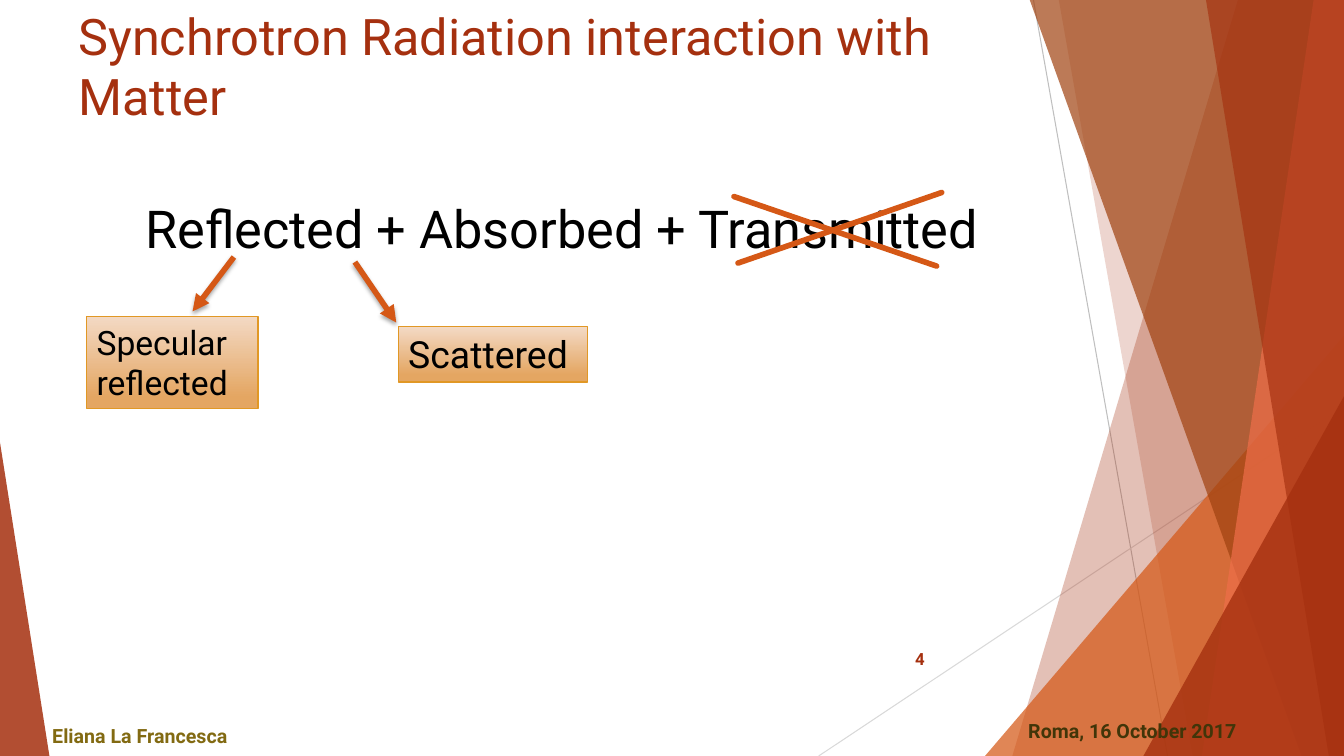
from pptx import Presentation
from pptx.dml.color import RGBColor
from pptx.enum.shapes import MSO_CONNECTOR, MSO_SHAPE
from pptx.enum.text import MSO_ANCHOR, PP_ALIGN
from pptx.oxml import parse_xml
from pptx.oxml.ns import nsdecls, qn
from pptx.util import Inches, Pt

STRAIGHT = MSO_CONNECTOR.STRAIGHT
RECTANGLE, TRIANGLE = MSO_SHAPE.RECTANGLE, MSO_SHAPE.ISOSCELES_TRIANGLE
TOP, MIDDLE = MSO_ANCHOR.TOP, MSO_ANCHOR.MIDDLE
LEFT, CENTER, RIGHT = PP_ALIGN.LEFT, PP_ALIGN.CENTER, PP_ALIGN.RIGHT

FONT = "Roboto"
WIDTH, HEIGHT = 13.33, 7.5
BRICK, ORANGE, BROWN, CORAL = "A5300F", "D55816", "A04210", "EE6E4A"
BLACK = "000000"
SHADOW = (
    '<a:outerShdw blurRad="38100" dist="25400" dir="5400000" rotWithShape="0">'
    '<a:srgbClr val="000000"><a:alpha val="35000"/></a:srgbClr></a:outerShdw>'
)


def rgb(value):
    return RGBColor.from_string(value)


def paint(shape, color, opacity):
    shape.shadow.inherit = False
    shape.line.fill.background()
    shape.fill.solid()
    shape.fill.fore_color.rgb = rgb(color)
    tint = shape.fill._xPr.find(qn("a:solidFill"))[0]
    tint.append(parse_xml(f'<a:alpha {nsdecls("a")} val="{opacity * 1000}"/>'))


def add_line(slide, start, end, color, width, arrow=False, round_cap=False):
    line = slide.shapes.add_connector(
        STRAIGHT, *(Inches(value) for value in (*start, *end)))
    line.line.color.rgb = rgb(color)
    line.line.width = Pt(width)
    outline = line.line._get_or_add_ln()
    if round_cap:
        outline.set("cap", "rnd")
    if arrow:
        outline.append(parse_xml(f'<a:tailEnd {nsdecls("a")} type="triangle"/>'))
    effects = SHADOW if arrow else ""
    line._element.spPr.append(
        parse_xml(f'<a:effectLst {nsdecls("a")}>{effects}</a:effectLst>'))


def write(frame, text, size, color, align=LEFT, anchor=TOP, bold=False, wrap=True):
    frame.word_wrap = wrap
    frame.vertical_anchor = anchor
    paragraph = frame.paragraphs[0]
    paragraph.text = text
    paragraph.alignment = align
    font = paragraph.font
    font.name, font.size, font.bold = FONT, Pt(size), bold
    font.color.rgb = rgb(color)


def add_text(slide, box, text, size, color, **style):
    label = slide.shapes.add_textbox(*(Inches(value) for value in box))
    write(label.text_frame, text, size, color, **style)


def add_shard(slide, box, top_left, bottom_left, color, opacity):
    left, top, width, height = box
    right, bottom = left + width, top + height
    builder = slide.shapes.build_freeform(Inches(left + top_left), Inches(top))
    builder.add_line_segments(
        [(Inches(x), Inches(y)) for x, y in (
            (right, top), (right, bottom), (left + bottom_left, bottom))],
        close=True)
    paint(builder.convert_to_shape(), color, opacity)


def add_corner(slide, box, apex, color, opacity):
    corner = slide.shapes.add_shape(TRIANGLE, *(Inches(value) for value in box))
    corner.adjustments[0] = apex
    paint(corner, color, opacity)


def right_box(width, height):
    return WIDTH - width, HEIGHT - height, width, height


def add_backdrop(slide):
    add_line(slide, (10.25, 0), (11.58, HEIGHT), "BFBFBF", 0.75)
    add_line(slide, (WIDTH, 4.03), (8.12, HEIGHT), "D9D9D9", 0.75)
    full = HEIGHT + 0.01
    add_shard(slide, right_box(3.29, full), 2.24, 0, BRICK, 30)
    add_shard(slide, right_box(2.83, full), 0, 1.33, BRICK, 20)
    add_corner(slide, right_box(3.56, 4.17), 1, ORANGE, 72)
    add_shard(slide, right_box(3.12, full), 0, 2.7, BROWN, 70)
    add_shard(slide, right_box(1.41, full), 1.11, 0, CORAL, 70)
    add_shard(slide, right_box(1.37, full), 0, 1.22, BRICK, 65)
    add_corner(slide, right_box(1.99, 3.57), 1, BRICK, 80)
    add_corner(slide, (0, 4.39, 0.49, 3.11), 0, BRICK, 85)


def add_footer(slide, left, top):
    add_text(slide, (left + 8.29, top - 0.76, 0.56, 0.4), "4", 12, BRICK,
             align=RIGHT, anchor=MIDDLE, bold=True)
    add_text(slide, (left, top, 3.24, 0.4), "Eliana La Francesca", 14, "826A12",
             anchor=MIDDLE, bold=True)
    add_text(slide, (left + 9.68, top - 0.05, 3.24, 0.4), "Roma, 16 October 2017",
             14, "413509", anchor=MIDDLE, bold=True)


def add_outcome(slide, box, text, size, wrap=True):
    outcome = slide.shapes.add_shape(RECTANGLE, *(Inches(value) for value in box))
    outcome.shadow.inherit = False
    outcome.fill.gradient()
    outcome.fill.gradient_angle = 270
    stops = zip(outcome.fill.gradient_stops, ((0, "F3D9C4"), (0.88, "E4A662")))
    for stop, (position, color) in stops:
        stop.position = position
        stop.color.rgb = rgb(color)
    outcome.line.color.rgb = rgb("E19825")
    outcome.line.width = Pt(1)
    write(outcome.text_frame, text, size, BLACK, wrap=wrap)


def add_interaction(slide, left, top):
    add_text(slide, (left, top, 8.87, 0.73), "Reflected + Absorbed + Transmitted",
             37.3, BLACK, align=CENTER)
    add_line(slide, (left + 1.18, top + 0.65), (left + 0.77, top + 1.19),
             ORANGE, 4, arrow=True)
    add_line(slide, (left + 2.38, top + 0.7), (left + 2.79, top + 1.3),
             ORANGE, 4, arrow=True)
    add_outcome(slide, (left - 0.28, top + 1.24, 1.7, 0.91), "Specular reflected", 24)
    add_outcome(slide, (left + 2.81, top + 1.34, 1.88, 0.55), "Scattered", 26.7,
                wrap=False)
    add_line(slide, (left + 8.2, top + 0.01), (left + 6.18, top + 0.71),
             ORANGE, 4, round_cap=True)
    add_line(slide, (left + 8.15, top + 0.74), (left + 6.14, top + 0.05),
             ORANGE, 4, round_cap=True)


def main():
    deck = Presentation()
    deck.slide_width, deck.slide_height = Inches(WIDTH), Inches(HEIGHT)
    slide = deck.slides.add_slide(deck.slide_layouts[6])
    add_backdrop(slide)
    add_footer(slide, 0.42, 7.1)
    add_text(slide, (0.68, 0, 8.76, 1.44),
             "Synchrotron Radiation interaction with Matter", 36, BRICK)
    add_interaction(slide, 1.14, 1.9)
    deck.save("out.pptx")


if __name__ == "__main__":
    main()
